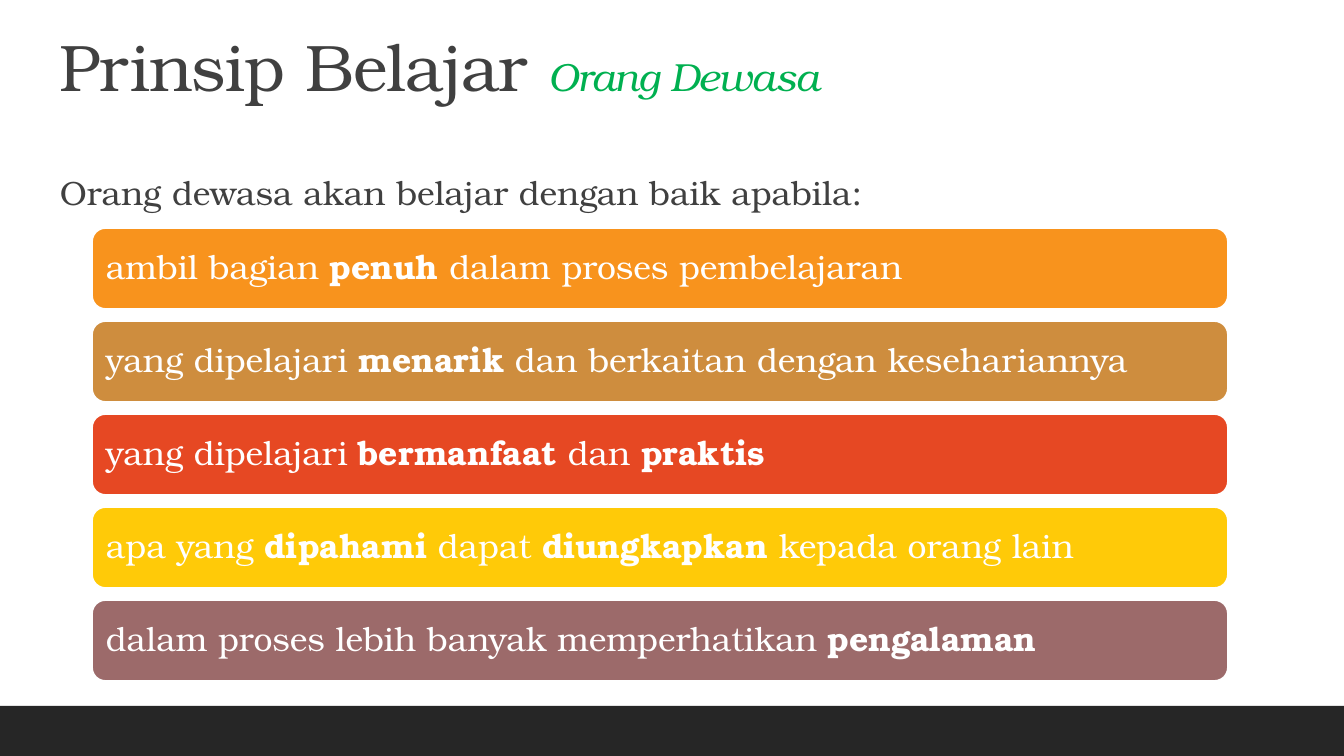
from pptx import Presentation
from pptx.dml.color import RGBColor
from pptx.enum.shapes import MSO_SHAPE as Shape
from pptx.enum.text import MSO_ANCHOR as Anchor, PP_ALIGN as Align
from pptx.util import Pt

PX = 914400 / 100.8
FONT = "TeX Gyre Bonum"
COLORS = {
    "white": "FFFFFF", "text": "404040", "accent": "00B050", "footer": "262626",
    "orange": "F8931D", "tan": "CE8D3E", "red": "E64823",
    "yellow": "FFCA08", "mauve": "9C6A6A",
}
PRINCIPLES = [
    ("orange", ["ambil bagian ", "penuh", " dalam proses pembelajaran"]),
    ("tan", ["yang dipelajari ", "menarik", " dan berkaitan dengan kesehariannya"]),
    ("red", ["yang dipelajari ", "bermanfaat", " dan ", "praktis"]),
    ("yellow", ["apa yang ", "dipahami", " dapat ", "diungkapkan", " kepada orang lain"]),
    ("mauve", ["dalam proses lebih banyak memperhatikan ", "pengalaman"]),
]


def px(value):
    """Turn pixels into EMU."""
    return round(value * PX)


def color(name):
    """Look up a named colour."""
    return RGBColor.from_string(COLORS[name])


def add_span(para, text, size, tint, bold=False, italic=False):
    """Add one styled run to a paragraph."""
    span = para.add_run()
    span.text = text
    font = span.font
    font.name, font.size, font.bold, font.italic = FONT, Pt(size), bold, italic
    font.color.rgb = color(tint)
    return span


def add_block(page, kind, box, fill):
    """Add a filled shape without line or shadow."""
    block = page.shapes.add_shape(kind, *map(px, box))
    block.shadow.inherit = False
    block.fill.solid()
    block.fill.fore_color.rgb = color(fill)
    block.line.fill.background()
    return block


def add_text_box(page, box, line_spacing):
    """Add a wrapping text box and return its paragraph."""
    frame = page.shapes.add_textbox(*map(px, box)).text_frame
    frame.word_wrap = True
    para = frame.paragraphs[0]
    para.line_spacing = line_spacing
    return para


def add_title(page, box):
    """Place the two-part title."""
    para = add_text_box(page, box, 0.9)
    spans = [
        add_span(para, "Prinsip Belajar ", 47, "text"),
        add_span(para, "Orang Dewasa", 28, "accent", italic=True),
    ]
    for span in spans:
        span.font._element.set("spc", "-50")


def add_intro(page, box):
    """Place the sentence that leads into the principles."""
    para = add_text_box(page, box, 1.1)
    para.space_before, para.space_after = Pt(12), Pt(2)
    add_span(para, "Orang dewasa akan belajar dengan baik apabila:", 24, "text")


def add_principles(page, box, gap):
    """Stack the principle bars evenly inside the box."""
    left, top, width, height = box
    pitch = (height + gap) / len(PRINCIPLES)
    for index, (fill, parts) in enumerate(PRINCIPLES):
        bar = add_block(page, Shape.ROUNDED_RECTANGLE,
                        (left, top + index * pitch, width, pitch - gap), fill)
        bar.line.color.rgb = color("white")
        bar.line.width = Pt(1.25)
        frame = bar.text_frame
        frame.word_wrap = True
        frame.vertical_anchor = Anchor.MIDDLE
        frame.margin_left = frame.margin_right = px(10)
        para = frame.paragraphs[0]
        para.alignment = Align.LEFT
        para.line_spacing = 0.9
        for order, text in enumerate(parts):
            add_span(para, text, 24, "white", bold=order % 2 == 1)


def main():
    """Build and save the slide."""
    deck = Presentation()
    deck.slide_width, deck.slide_height = px(1344), px(756)
    page = deck.slides.add_slide(deck.slide_layouts[6])
    add_block(page, Shape.RECTANGLE, (0, 706, 1344, 50), "footer")
    add_intro(page, (50, 163, 907, 60))
    add_title(page, (50, 30, 907, 126))
    add_principles(page, (92, 228, 1136, 453), 12)
    deck.save("out.pptx")


if __name__ == "__main__":
    main()
